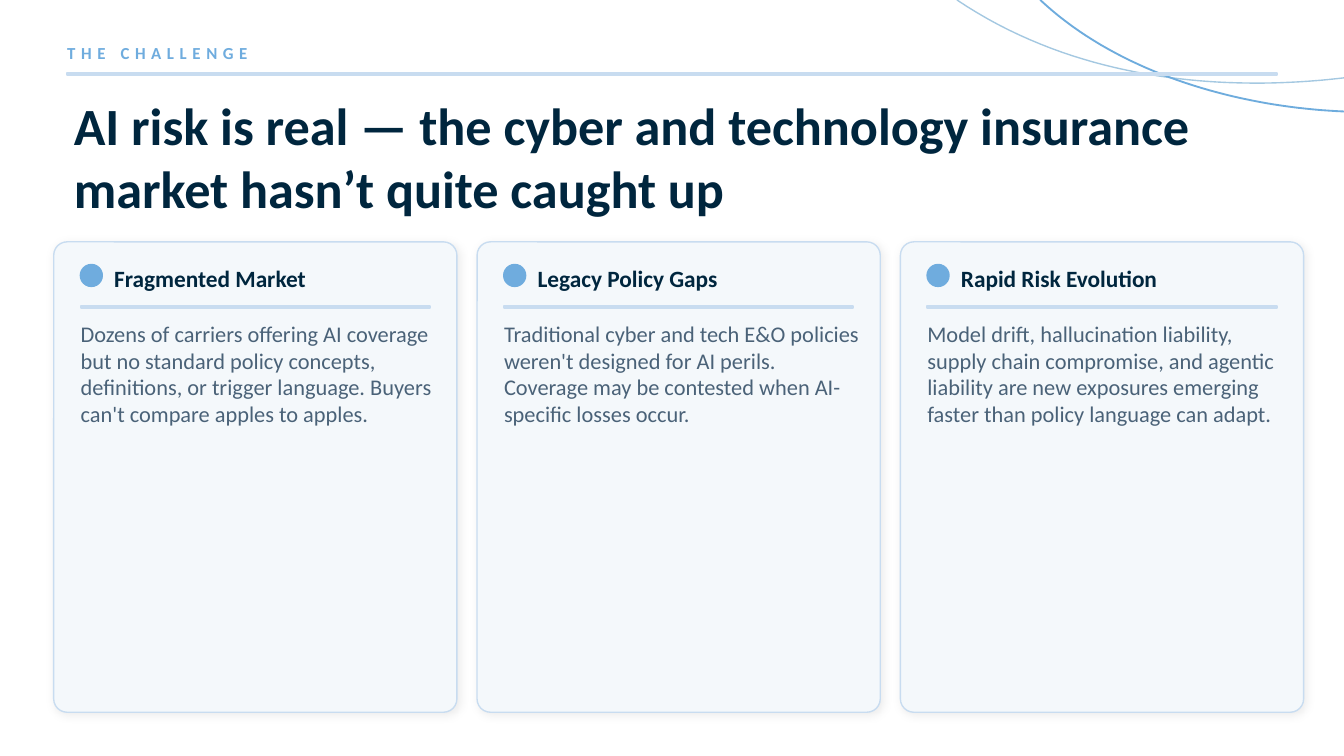
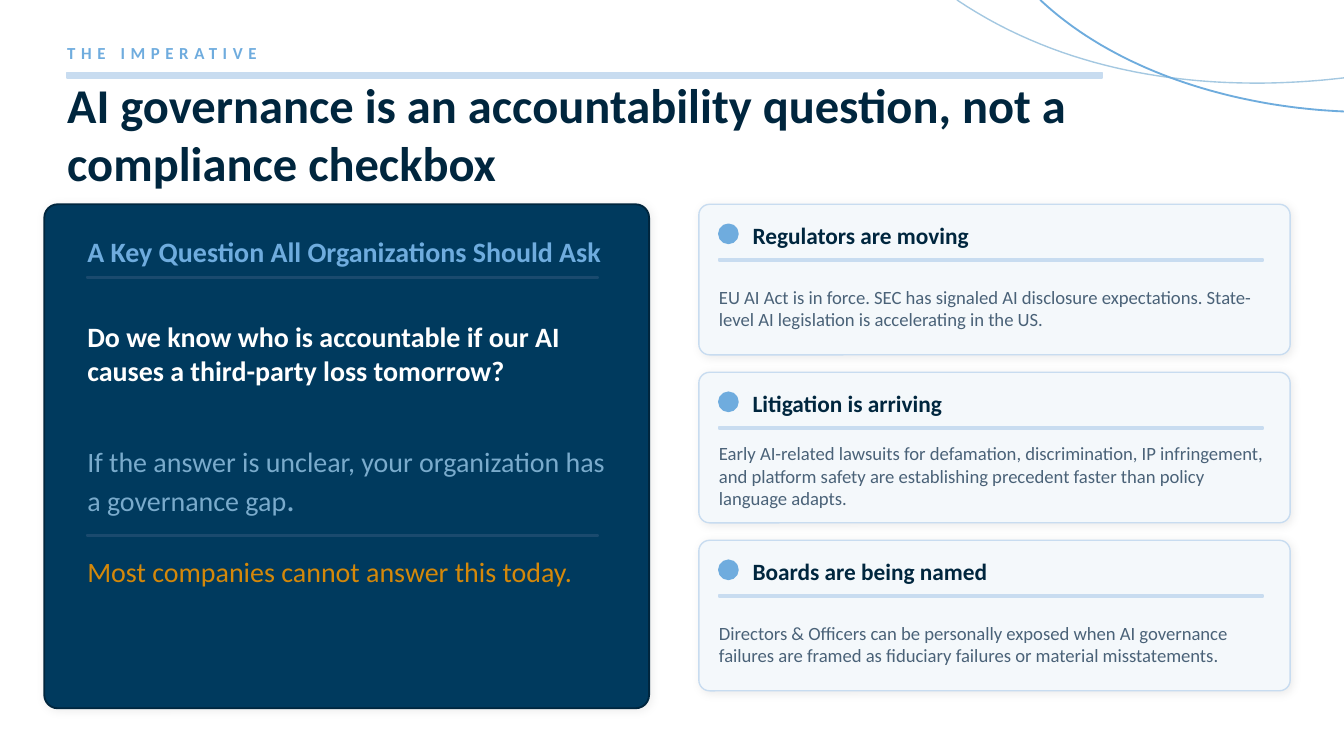
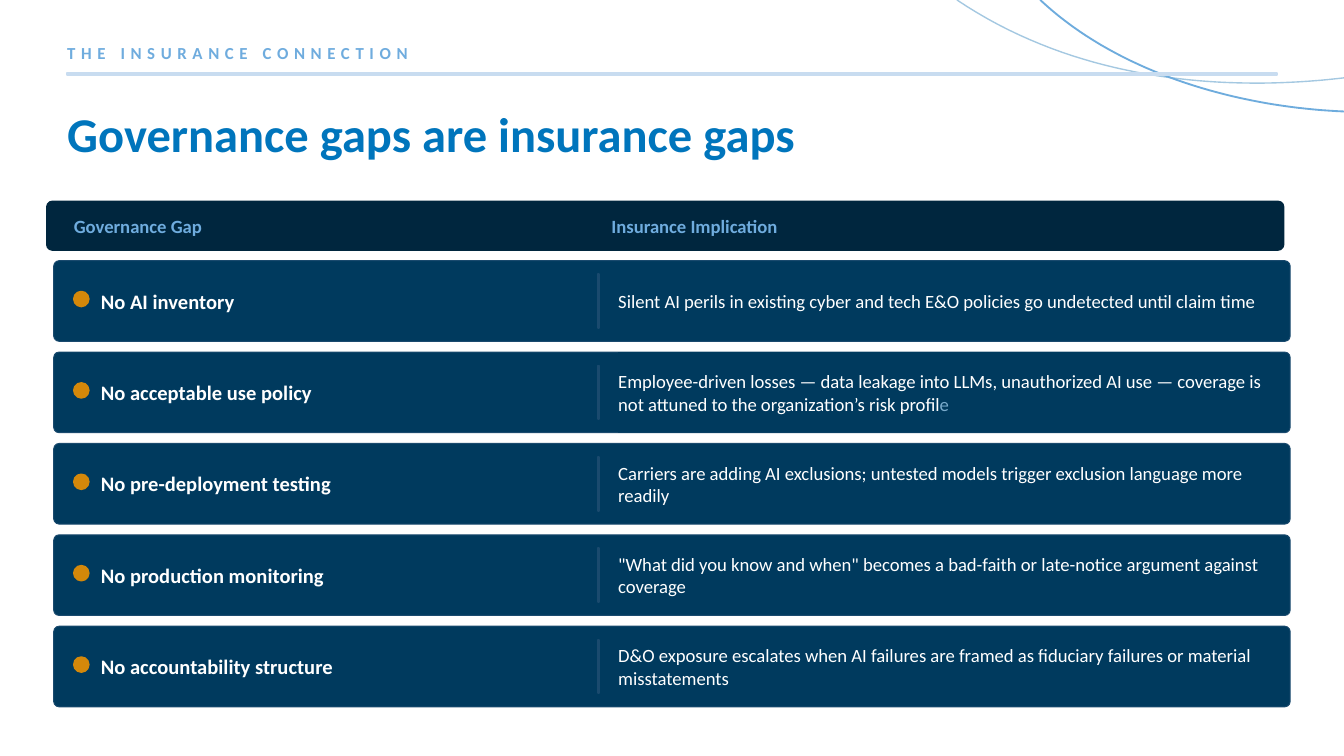
"""Build three slides on AI risk, governance and the insurance gaps between them."""
from dataclasses import dataclass

from lxml.etree import SubElement
from pptx import Presentation
from pptx.dml.color import RGBColor
from pptx.enum.shapes import MSO_SHAPE as SHAPE
from pptx.enum.text import MSO_ANCHOR as ANCHOR
from pptx.oxml.ns import qn
from pptx.util import Pt

PX = 9144


@dataclass(frozen=True)
class Theme:
    font: str = "Calibri"
    ink: RGBColor = RGBColor.from_string("00263E")
    navy: RGBColor = RGBColor.from_string("003A5E")
    divider: RGBColor = RGBColor.from_string("1A4A6E")
    bright: RGBColor = RGBColor.from_string("0075BC")
    accent: RGBColor = RGBColor.from_string("6FACDE")
    muted: RGBColor = RGBColor.from_string("7AABCC")
    arc: RGBColor = RGBColor.from_string("6EACDD")
    pale_arc: RGBColor = RGBColor.from_string("A4C8E1")
    rule: RGBColor = RGBColor.from_string("C8DCF0")
    card: RGBColor = RGBColor.from_string("F4F8FB")
    body: RGBColor = RGBColor.from_string("4A6278")
    amber: RGBColor = RGBColor.from_string("D4880A")
    white: RGBColor = RGBColor.from_string("FFFFFF")
    label_size: float = 9
    small_size: float = 10
    row_size: float = 11
    body_size: float = 12
    heading_size: float = 12.5
    question_size: float = 15
    stop_size: float = 18
    title_size: float = 26
    large_title_size: float = 28


THEME = Theme()


def add_box(slide, kind, box, fill, line=None, weight=1, radius=0, shadow=False):
    shape = slide.shapes.add_shape(kind, *(value * PX for value in box))
    shape.fill.solid()
    shape.fill.fore_color.rgb = fill
    shape.line.color.rgb = line or fill
    shape.line.width = Pt(weight)
    shape.shadow.inherit = False
    if radius:
        shape.adjustments[0] = radius / min(box[2:])
    if shadow:
        effects = shape._element.spPr.find(qn("a:effectLst"))
        outer = SubElement(effects, qn("a:outerShdw"), blurRad=str(Pt(5)), dist=str(Pt(1)),
                           dir="2700000", algn="bl", rotWithShape="0")
        color = SubElement(outer, qn("a:srgbClr"), val="000000")
        SubElement(color, qn("a:alpha"), val="8000")
    return shape


def add_text(slide, box, text, size, color, bold=False, anchor=ANCHOR.MIDDLE):
    shape = slide.shapes.add_textbox(*(value * PX for value in box))
    frame = shape.text_frame
    frame.word_wrap = True
    frame.vertical_anchor = anchor
    frame.margin_left = frame.margin_right = frame.margin_top = frame.margin_bottom = 0
    frame.text = text
    font = frame.paragraphs[0].runs[0].font
    font.name, font.size, font.bold, font.color.rgb = THEME.font, Pt(size), bold, color
    return shape


presentation = Presentation()
presentation.slide_width = 1000 * PX
presentation.slide_height = 5625 * PX // 10
layout = presentation.slide_layouts[6]
challenge, imperative, connection = (presentation.slides.add_slide(layout) for _ in range(3))

ARCS = [
    (((1000, 58), (932, 66), (813, 68), (712, 0)), THEME.pale_arc, 0.75),
    (((1000, 83), (926, 80), (835, 57), (774, 0)), THEME.arc, 1),
]
STEPS = 40
for controls, color, weight in ARCS:
    points = []
    for step in range(STEPS + 1):
        t = step / STEPS
        weights = ((1 - t) ** 3, 3 * t * (1 - t) ** 2, 3 * t ** 2 * (1 - t), t ** 3)
        points.append(tuple(round(PX * sum(w * point[axis] for w, point in zip(weights, controls)))
                            for axis in range(2)))
    builder = challenge.shapes.build_freeform(*points[0])
    builder.add_line_segments(points[1:], close=False)
    curve = builder.convert_to_shape()
    curve.fill.background()
    curve.line.color.rgb = color
    curve.line.width = Pt(weight)
    curve.shadow.inherit = False
    layout.shapes._spTree.append(curve._element)

HEADERS = [
    (challenge, "THE CHALLENGE", (50, 54, 900, 2), (55, 81, 900, 70),
     "AI risk is real — the cyber and technology insurance market hasn’t quite caught up",
     THEME.large_title_size, THEME.ink),
    (imperative, "THE IMPERATIVE", (50, 54, 770, 4), (50, 68, 900, 62),
     "AI governance is an accountability question, not a compliance checkbox",
     THEME.title_size, THEME.ink),
    (connection, "THE INSURANCE CONNECTION", (50, 54, 900, 2), (50, 68, 900, 62),
     "Governance gaps are insurance gaps", THEME.title_size, THEME.bright),
]
for slide, label, rule_box, title_box, title, size, color in HEADERS:
    label_shape = add_text(slide, (50, 28, 900, 22), label, THEME.label_size, THEME.accent, True)
    label_shape.text_frame.paragraphs[0].runs[0].font._element.set("spc", "300")
    add_box(slide, SHAPE.RECTANGLE, rule_box, THEME.rule)
    add_text(slide, title_box, title, size, color, True)

PANEL_LEFT, PANEL_WIDTH = 65, 400
add_box(imperative, SHAPE.ROUNDED_RECTANGLE, (33, 152, 450, 375), THEME.navy, THEME.ink,
        radius=10, shadow=True)
PANEL_TEXTS = [
    (172, 30, "A Key Question All Organizations Should Ask", THEME.accent, True),
    (218, 90, "Do we know who is accountable if our AI causes a third-party loss tomorrow?",
     THEME.white, True),
    (322, 72, "If the answer is unclear, your organization has a governance gap",
     THEME.muted, False),
    (406, 38, "Most companies cannot answer this today.", THEME.amber, False),
]
for top, height, text, color, bold in PANEL_TEXTS:
    text_shape = add_text(imperative, (PANEL_LEFT, top, PANEL_WIDTH, height), text,
                          THEME.question_size, color, bold)
    if text.endswith("gap"):
        stop = text_shape.text_frame.paragraphs[0].add_run()
        stop.text = "."
        stop.font.name, stop.font.size = THEME.font, Pt(THEME.stop_size)
        stop.font.color.rgb = color
for top in (206, 398):
    add_box(imperative, SHAPE.RECTANGLE, (PANEL_LEFT, top, 380, 1), THEME.divider)

CHALLENGES = [
    ("Fragmented Market",
     "Dozens of carriers offering AI coverage but no standard policy concepts, definitions, "
     "or trigger language. Buyers can't compare apples to apples."),
    ("Legacy Policy Gaps",
     "Traditional cyber and tech E&O policies weren't designed for AI perils. "
     "Coverage may be contested when AI-specific losses occur."),
    ("Rapid Risk Evolution",
     "Model drift, hallucination liability, supply chain compromise, and agentic liability "
     "are new exposures emerging faster than policy language can adapt."),
]
PRESSURES = [
    ("Regulators are moving",
     "EU AI Act is in force. SEC has signaled AI disclosure expectations. "
     "State-level AI legislation is accelerating in the US."),
    ("Litigation is arriving",
     "Early AI-related lawsuits for defamation, discrimination, IP infringement, and platform "
     "safety are establishing precedent faster than policy language adapts."),
    ("Boards are being named",
     "Directors & Officers can be personally exposed when AI governance failures are framed "
     "as fiduciary failures or material misstatements."),
]
CARD_GROUPS = [
    (challenge, CHALLENGES, (40, 180), (315, 0), (300, 350), 10, (20, 17, 16, 16),
     (45, 12, 245, 30), (20, 48, 260, 1), (20, 58, 265, 270), THEME.body_size, ANCHOR.TOP),
    (imperative, PRESSURES, (520, 152), (0, 125), (440, 112), 8, (15, 15, 14, 14),
     (40, 9, 380, 28), (15, 41, 405, 1), (15, 48, 410, 58), THEME.small_size, ANCHOR.MIDDLE),
]
for (slide, cards, origin, pitch, card_size, radius,
     dot, heading_box, rule, body_box, body_size, anchor) in CARD_GROUPS:
    for index, (heading, body) in enumerate(cards):
        left, top = (start + index * gap for start, gap in zip(origin, pitch))
        dot_at, heading_at, rule_at, body_at = (
            (left + x, top + y, width, height)
            for x, y, width, height in (dot, heading_box, rule, body_box))
        add_box(slide, SHAPE.ROUNDED_RECTANGLE, (left, top, *card_size), THEME.card, THEME.rule,
                0.75, radius, shadow=True)
        add_box(slide, SHAPE.OVAL, dot_at, THEME.accent)
        add_text(slide, heading_at, heading, THEME.heading_size, THEME.ink, True)
        add_box(slide, SHAPE.RECTANGLE, rule_at, THEME.rule)
        add_text(slide, body_at, body, body_size, THEME.body, anchor=anchor)

add_box(connection, SHAPE.ROUNDED_RECTANGLE, (35, 150, 920, 36), THEME.ink, radius=4)
for left, width, text in ((55, 380, "Governance Gap"), (455, 500, "Insurance Implication")):
    add_text(connection, (left, 150, width, 36), text, THEME.small_size, THEME.accent, True)

GAPS = [
    ("No AI inventory",
     "Silent AI perils in existing cyber and tech E&O policies go undetected until claim time", ""),
    ("No acceptable use policy",
     "Employee-driven losses — data leakage into LLMs, unauthorized AI use — coverage is "
     "not attuned to the organization’s risk profil", "e"),
    ("No pre-deployment testing",
     "Carriers are adding AI exclusions; untested models trigger exclusion language more readily",
     ""),
    ("No production monitoring",
     '"What did you know and when" becomes a bad-faith or late-notice argument against coverage',
     ""),
    ("No accountability structure",
     "D&O exposure escalates when AI failures are framed as fiduciary failures or material "
     "misstatements", ""),
]
ROW_HEIGHT, ROW_PITCH = 60, 68
for index, (gap, implication, muted_end) in enumerate(GAPS):
    top = 194 + index * ROW_PITCH
    add_box(connection, SHAPE.ROUNDED_RECTANGLE, (40, top, 920, ROW_HEIGHT), THEME.navy,
            THEME.divider, 0.5, radius=4)
    add_box(connection, SHAPE.OVAL, (55, top + 23, 11, 11), THEME.amber)
    add_text(connection, (75, top, 355, ROW_HEIGHT), gap, THEME.row_size, THEME.white, True)
    add_box(connection, SHAPE.RECTANGLE, (445, top + 10, 1, 40), THEME.divider)
    implication_shape = add_text(connection, (460, top, 485, ROW_HEIGHT), implication,
                                 THEME.small_size, THEME.white)
    if muted_end:
        implication_shape.fill.solid()
        implication_shape.fill.fore_color.rgb = THEME.navy
        ending = implication_shape.text_frame.paragraphs[0].add_run()
        ending.text = muted_end
        ending.font.name, ending.font.size = THEME.font, Pt(THEME.small_size)
        ending.font.color.rgb = THEME.muted

presentation.save("out.pptx")
